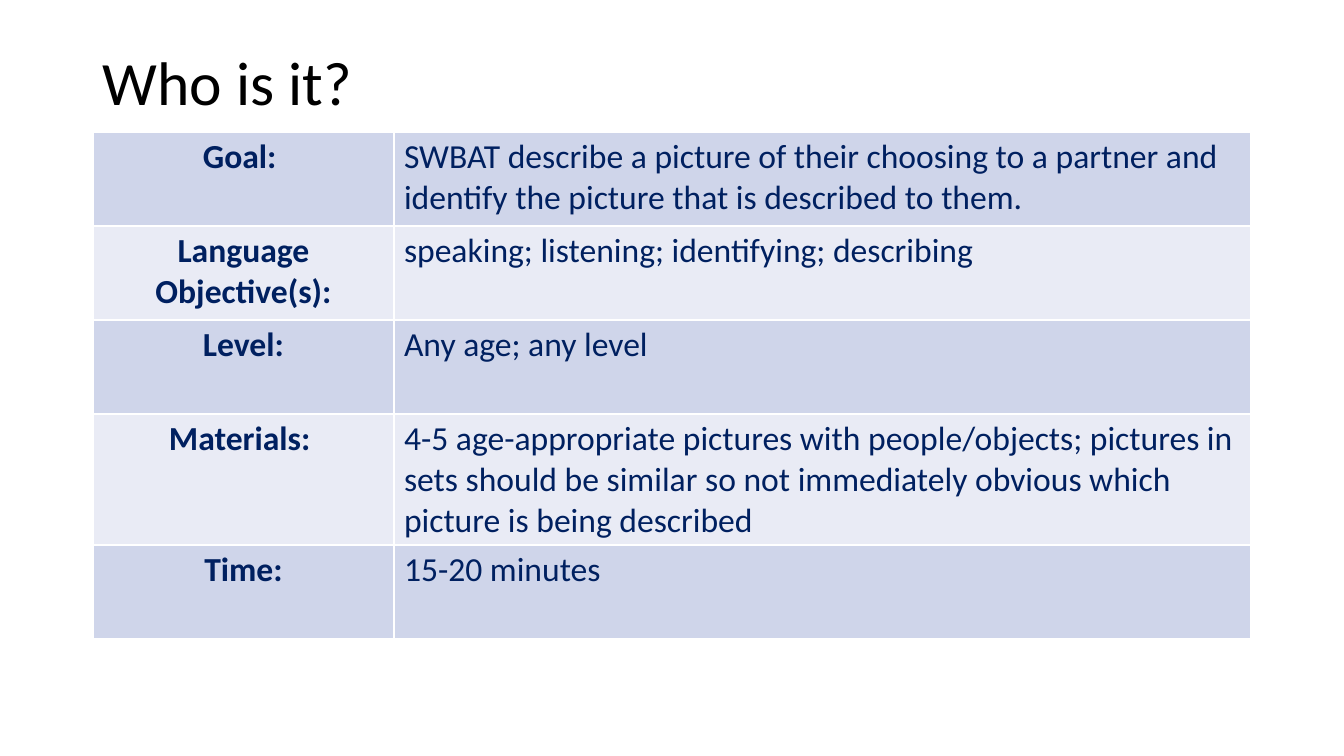
import pptx
import pptx.util
import pptx.dml.color
import pptx.enum.text
import pptx.oxml
import pptx.oxml.ns

TITLE = "Who is it?"
LESSON = [
    ("Goal: ", "SWBAT describe a picture of their choosing to a partner and "
               "identify the picture that is described to them."),
    ("Language Objective(s):", "speaking; listening; identifying; describing"),
    ("Level:", "Any age; any level"),
    ("Materials: ", "4-5 age-appropriate pictures with people/objects; pictures in "
                    "sets should be similar so not immediately obvious which "
                    "picture is being described"),
    ("Time:", "15-20 minutes"),
]
COLORS = {"title": "000000", "text": "002060", "odd": "CFD5EA",
          "even": "E9EBF5", "border": "FFFFFF"}
FONT = "Calibri"
SLIDE_W, SLIDE_H = 1344, 756
LEFT, TITLE_TOP, TITLE_W, TITLE_H = 93, 40, 1004, 91
TABLE_TOP = 132
COLUMN_WIDTHS = [301, 857]
ROW_HEIGHTS = [94, 94, 94, 124, 94]


def px(length):
    return pptx.util.Emu(round(length * 914400 / 100.8))


def rgb(name):
    return pptx.dml.color.RGBColor.from_string(COLORS[name])


def style(font, size, color, bold=False):
    font.name = FONT
    font.size = pptx.util.Pt(size)
    font.bold = bold
    font.color.rgb = rgb(color)


def add_borders(cell):
    properties = cell._tc.get_or_add_tcPr()
    for position, side in enumerate(("lnL", "lnR", "lnT", "lnB")):
        properties.insert(position, pptx.oxml.parse_xml(
            f'<a:{side} {pptx.oxml.ns.nsdecls("a")} w="12700"><a:solidFill>'
            f'<a:srgbClr val="{COLORS["border"]}"/></a:solidFill></a:{side}>'))


def add_title(slide):
    frame = slide.shapes.add_textbox(px(LEFT), px(TITLE_TOP), px(TITLE_W), px(TITLE_H)).text_frame
    frame.word_wrap = True
    frame.vertical_anchor = pptx.enum.text.MSO_ANCHOR.MIDDLE
    frame.text = TITLE
    heading = frame.paragraphs[0]
    heading.line_spacing = 0.9
    style(heading.runs[0].font, 44, "title")


def add_lesson(slide):
    lesson = slide.shapes.add_table(
        len(LESSON), len(COLUMN_WIDTHS), px(LEFT), px(TABLE_TOP),
        px(sum(COLUMN_WIDTHS)), px(sum(ROW_HEIGHTS))).table
    for column, width in zip(lesson.columns, COLUMN_WIDTHS):
        column.width = px(width)
    for index, (row, height, entry) in enumerate(zip(lesson.rows, ROW_HEIGHTS, LESSON)):
        row.height = px(height)
        for cell, words, is_label in zip(row.cells, entry, (True, False)):
            cell.fill.solid()
            cell.fill.fore_color.rgb = rgb("even" if index % 2 else "odd")
            add_borders(cell)
            cell.text_frame.text = words
            paragraph = cell.text_frame.paragraphs[0]
            if is_label:
                paragraph.alignment = pptx.enum.text.PP_ALIGN.CENTER
            style(paragraph.runs[0].font, 24, "text", is_label)


def main():
    deck = pptx.Presentation()
    deck.slide_width, deck.slide_height = px(SLIDE_W), px(SLIDE_H)
    slide = deck.slides.add_slide(deck.slide_layouts[6])
    add_title(slide)
    add_lesson(slide)
    deck.save("out.pptx")


if __name__ == "__main__":
    main()
